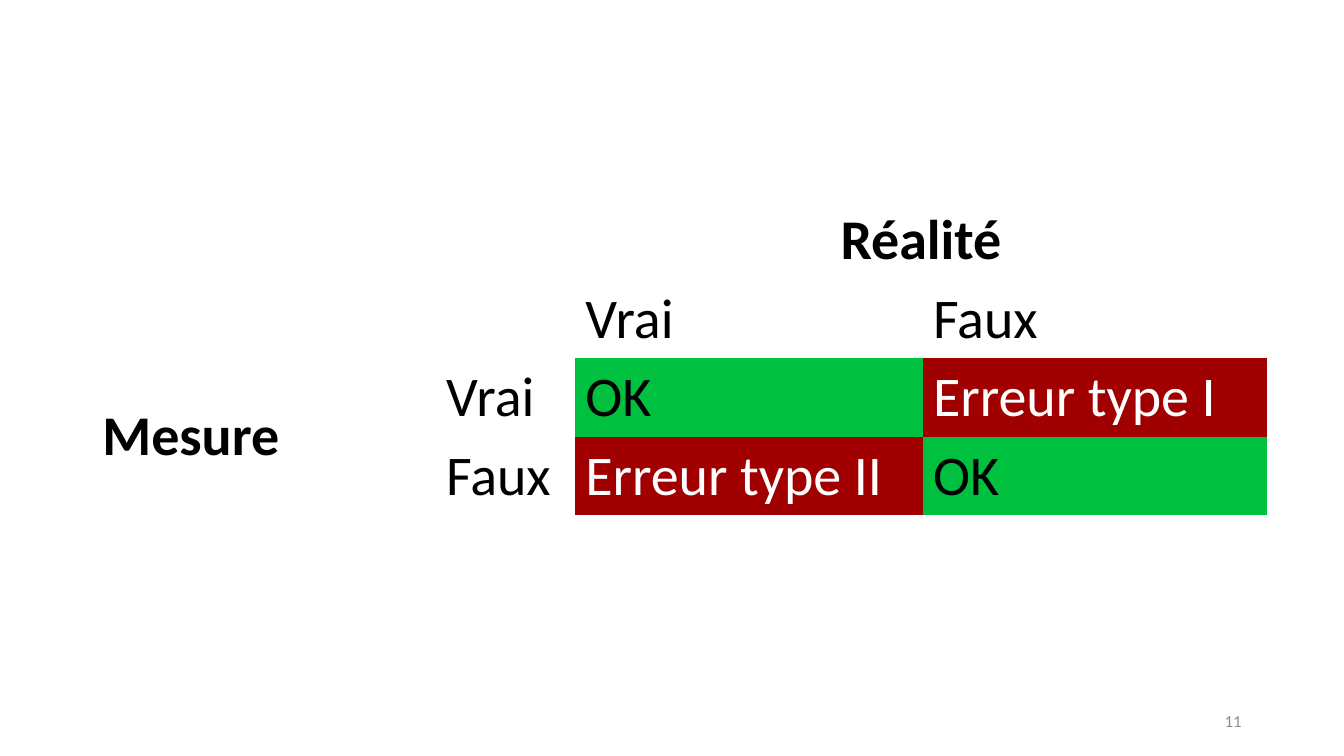
from pptx import Presentation
from pptx.dml.color import RGBColor
from pptx.enum.text import MSO_ANCHOR, PP_ALIGN
from pptx.oxml.ns import qn
from pptx.util import Pt

LEFT, CENTER, RIGHT = PP_ALIGN.LEFT, PP_ALIGN.CENTER, PP_ALIGN.RIGHT
TOP, MIDDLE = MSO_ANCHOR.TOP, MSO_ANCHOR.MIDDLE

BLACK = RGBColor(0x00, 0x00, 0x00)
WHITE = RGBColor(0xFF, 0xFF, 0xFF)
GRAY = RGBColor(0x8C, 0x8C, 0x8C)
GREEN = RGBColor(0x00, 0xC0, 0x40)
RED = RGBColor(0xA0, 0x00, 0x00)

PLAIN_TABLE_STYLE = "{2D5ABB26-0587-4C30-8999-92F81FD0307C}"
COLUMN_WIDTHS = (245.5, 99.4, 248.4, 245.5)
ROW_HEIGHT = 56
OUTCOMES = {"OK": (GREEN, BLACK), "Erreur type I": (RED, WHITE), "Erreur type II": (RED, WHITE)}
HEADINGS = ("Réalité", "Mesure")
ROWS = (
    ("", "", "Réalité", ""),
    ("", "", "Vrai", "Faux"),
    ("Mesure", "Vrai", "OK", "Erreur type I"),
    ("", "Faux", "Erreur type II", "OK"),
)


class SlideBuilder:
    font_name = "Calibri"
    table_size = 40
    number_size = 12

    def __init__(self, slide):
        self.slide = slide

    def set_text(self, text_frame, text, size, color, bold=False, align=LEFT):
        text_frame.text = text
        paragraph = text_frame.paragraphs[0]
        paragraph.alignment = align
        font = paragraph.runs[0].font
        font.name = self.font_name
        font.size = Pt(size)
        font.bold = bold
        font.color.rgb = color

    def add_matrix(self, left, top):
        """Add the table that crosses the measure with reality."""
        shape = self.slide.shapes.add_table(
            len(ROWS), len(COLUMN_WIDTHS), Pt(left), Pt(top),
            Pt(sum(COLUMN_WIDTHS)), Pt(ROW_HEIGHT * len(ROWS)))
        table = shape.table
        table.first_row = table.horz_banding = False
        shape._element.find(".//" + qn("a:tableStyleId")).text = PLAIN_TABLE_STYLE
        for column, width in zip(table.columns, COLUMN_WIDTHS):
            column.width = Pt(width)
        for row_index, texts in enumerate(ROWS):
            for column_index, text in enumerate(texts):
                self.fill_cell(table.cell(row_index, column_index), text)
        table.cell(0, 2).merge(table.cell(0, 3))
        table.cell(2, 0).merge(table.cell(3, 0))

    def fill_cell(self, cell, text):
        fill_color, text_color = OUTCOMES.get(text, (None, BLACK))
        if fill_color is None:
            cell.fill.background()
        else:
            cell.fill.solid()
            cell.fill.fore_color.rgb = fill_color
        cell.vertical_anchor = MIDDLE if text == "Mesure" else TOP
        if text:
            self.set_text(cell.text_frame, text, self.table_size, text_color,
                          text in HEADINGS, CENTER if text == "Réalité" else LEFT)

    def add_page_number(self, number, left, top, width, height):
        box = self.slide.shapes.add_textbox(Pt(left), Pt(top), Pt(width), Pt(height))
        box.text_frame.word_wrap = True
        box.text_frame.vertical_anchor = MIDDLE
        self.set_text(box.text_frame, number, self.number_size, GRAY, align=RIGHT)


def main():
    presentation = Presentation()
    presentation.slide_width = Pt(960)
    presentation.slide_height = Pt(540)
    builder = SlideBuilder(presentation.slides.add_slide(presentation.slide_layouts[6]))
    builder.add_matrix(66, 144)
    builder.add_page_number("11", 678, 500.5, 216, 28.75)
    presentation.save("out.pptx")


if __name__ == "__main__":
    main()
